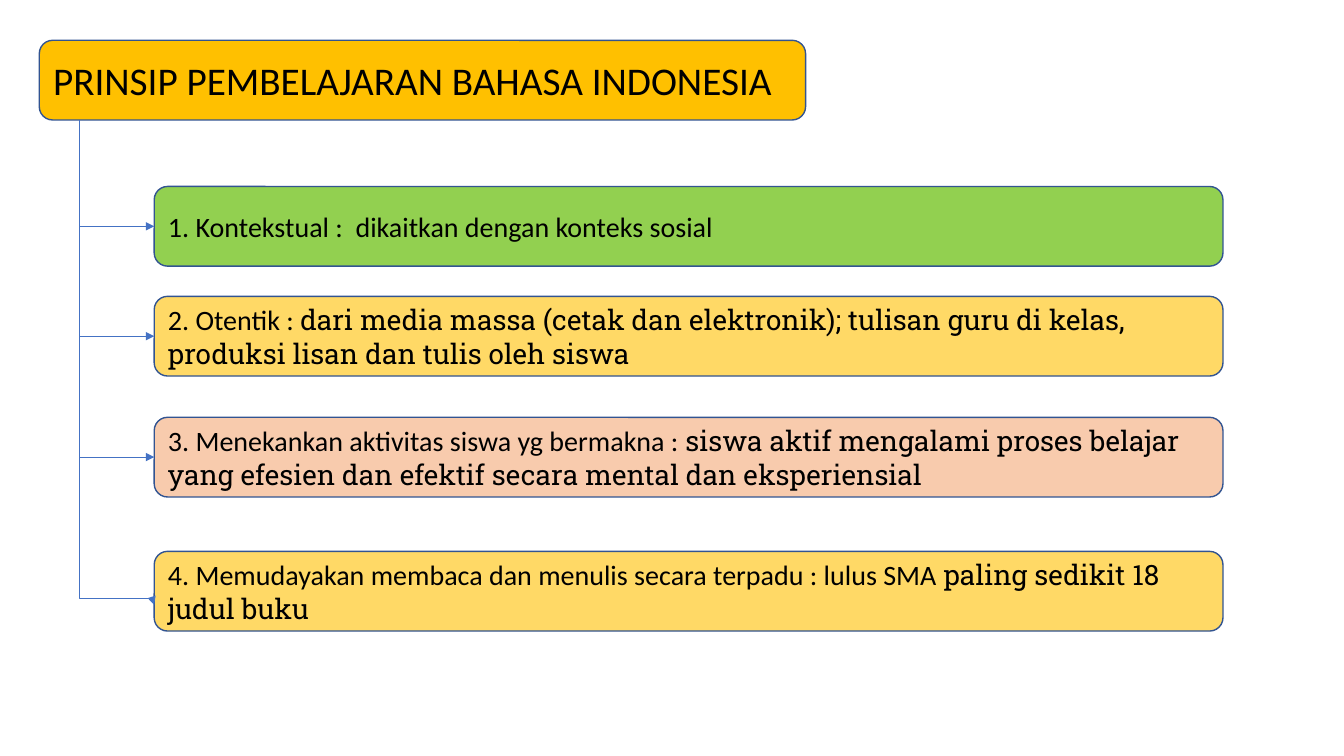
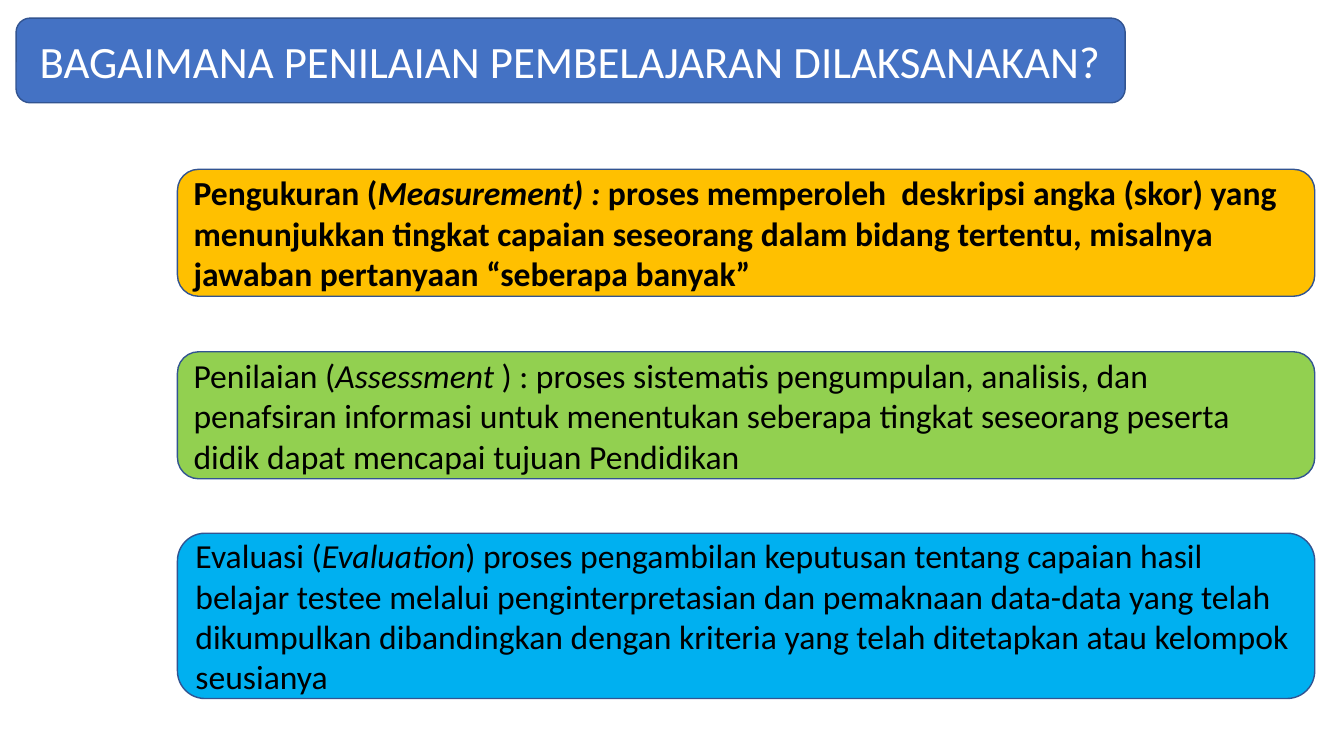
"""Build two slides on the teaching and grading of Bahasa Indonesia."""
import lxml.etree
import pptx
import pptx.dml.color
import pptx.enum.shapes
import pptx.enum.text
import pptx.oxml.ns
import pptx.util

Inches = pptx.util.Inches
Color = pptx.dml.color.RGBColor
Align = pptx.enum.text.PP_ALIGN
Link = pptx.enum.shapes.MSO_CONNECTOR
qn = pptx.oxml.ns.qn

BLACK = Color(0x00, 0x00, 0x00)
WHITE = Color(0xFF, 0xFF, 0xFF)
BLUE = Color(0x44, 0x72, 0xC4)
NAVY = Color(0x32, 0x54, 0x91)
GOLD = Color(0xFF, 0xC0, 0x00)
SAND = Color(0xFF, 0xD9, 0x66)
GREEN = Color(0x92, 0xD0, 0x50)
PEACH = Color(0xF8, 0xCB, 0xAD)
SKY = Color(0x00, 0xB0, 0xF0)

SLAB = {"name": "Roboto Slab"}
BOLD = {"bold": True}
SLANT = {"italic": True}

TRUNK = 0.79
EDGE = 1.53
TALL = 0.79

RULES = [
    (1.85, GREEN, [("1. Kontekstual :  dikaitkan dengan konteks sosial", {})]),
    (2.94, SAND, [
        ("2. Otentik : ", {}),
        ("dari media massa (cetak dan elektronik); tulisan guru di kelas, "
         "produksi lisan dan tulis oleh siswa", SLAB)]),
    (4.14, PEACH, [
        ("3. Menekankan aktivitas siswa yg bermakna : ", {}),
        ("siswa aktif mengalami proses belajar yang efesien dan efektif "
         "secara mental dan eksperiensial", SLAB)]),
    (5.47, SAND, [
        ("4. Memudayakan membaca dan menulis secara terpadu : lulus SMA ", {}),
        ("paling sedikit 18 judul buku", SLAB)]),
]

TERMS = [
    (1.68, 1.26, GOLD, [
        ("Pengukuran (", BOLD),
        ("Measurement) :", BOLD | SLANT),
        (" proses memperoleh  deskripsi angka (skor) yang menunjukkan tingkat "
         "capaian seseorang dalam bidang tertentu, misalnya jawaban "
         "pertanyaan “seberapa banyak”", BOLD)]),
    (3.49, 1.26, GREEN, [
        ("Penilaian (", {}),
        ("Assessment ", SLANT),
        (") : proses sistematis pengumpulan, analisis, dan penafsiran "
         "informasi untuk menentukan seberapa tingkat seseorang peserta didik "
         "dapat mencapai tujuan Pendidikan", {})]),
    (5.29, 1.64, SKY, [
        ("Evaluasi (", {}),
        ("Evaluation", SLANT),
        (") proses pengambilan keputusan tentang capaian hasil belajar testee "
         "melalui penginterpretasian dan pemaknaan data-data yang telah "
         "dikumpulkan dibandingkan dengan kriteria yang telah ditetapkan atau "
         "kelompok seusianya", {})]),
]


def style(item, form):
    """Set each format value on the item."""
    for key, value in form.items():
        setattr(item, key, value)


def add_box(slide, place, fill, runs, size, ink=BLACK, align=Align.LEFT):
    """Add a rounded box that holds the styled runs."""
    kind = pptx.enum.shapes.MSO_SHAPE.ROUNDED_RECTANGLE
    box = slide.shapes.add_shape(kind, *map(Inches, place))
    box.shadow.inherit = False
    box.fill.solid()
    box.fill.fore_color.rgb = fill
    box.line.color.rgb = NAVY
    box.line.width = pptx.util.Pt(1)
    frame = box.text_frame
    style(frame, {"word_wrap": True,
                  "vertical_anchor": pptx.enum.text.MSO_ANCHOR.MIDDLE})
    para = frame.paragraphs[0]
    para.alignment = align
    base = {"name": "Calibri", "size": pptx.util.Pt(size)}
    for text, form in runs:
        run = para.add_run()
        run.text = text
        style(run.font, base | form)
        run.font.color.rgb = ink


def add_arrow(slide, kind, *ends):
    """Add a thin blue connector with an arrowhead at its end."""
    arrow = slide.shapes.add_connector(kind, *map(Inches, ends))
    arrow.line.color.rgb = BLUE
    arrow.line.width = pptx.util.Pt(0.5)
    line = arrow.line._get_or_add_ln()
    lxml.etree.SubElement(line, qn("a:tailEnd"), type="triangle")
    lxml.etree.SubElement(arrow._element.spPr, qn("a:effectLst"))
    return arrow


def add_trunk(slide, top, foot):
    """Add the bent arrow that runs down from the title to the last box."""
    span, wide = foot - top, EDGE - TRUNK
    mid_x, mid_y = (TRUNK + EDGE) / 2, (top + foot) / 2
    trunk = add_arrow(slide, Link.ELBOW, mid_x + span / 2, mid_y - wide / 2,
                      mid_x - span / 2, mid_y + wide / 2)
    props = trunk._element.spPr
    props.find(qn("a:xfrm")).set("rot", "16200000")
    guides = props.find(qn("a:prstGeom")).find(qn("a:avLst"))
    lxml.etree.SubElement(guides, qn("a:gd"), name="adj1", fmla="val 98700")


def draw_rules(slide):
    """Draw the title and the tree of four rules."""
    title = [("PRINSIP PEMBELAJARAN BAHASA INDONESIA", {})]
    add_box(slide, (0.39, 0.4, 7.6, TALL), GOLD, title, 28)
    for top, fill, runs in RULES:
        add_box(slide, (EDGE, top, 10.6, TALL), fill, runs, 20)
    add_trunk(slide, 0.4 + TALL, 6)
    for top, fill, runs in RULES[:-1]:
        mid = top + TALL / 2
        add_arrow(slide, Link.STRAIGHT, TRUNK, mid, EDGE, mid)


def draw_terms(slide):
    """Draw the title and the three terms."""
    title = [("BAGAIMANA PENILAIAN PEMBELAJARAN DILAKSANAKAN?", {})]
    add_box(slide, (0.16, 0.18, 11, 0.84), BLUE, title, 32, WHITE, Align.CENTER)
    for top, tall, fill, runs in TERMS:
        add_box(slide, (1.76, top, 11.28, tall), fill, runs, 24)


def main():
    """Build and save the deck."""
    deck = pptx.Presentation()
    style(deck, {"slide_width": Inches(13.33), "slide_height": Inches(7.5)})
    for draw in (draw_rules, draw_terms):
        draw(deck.slides.add_slide(deck.slide_layouts[6]))
    deck.save("out.pptx")


if __name__ == "__main__":
    main()
